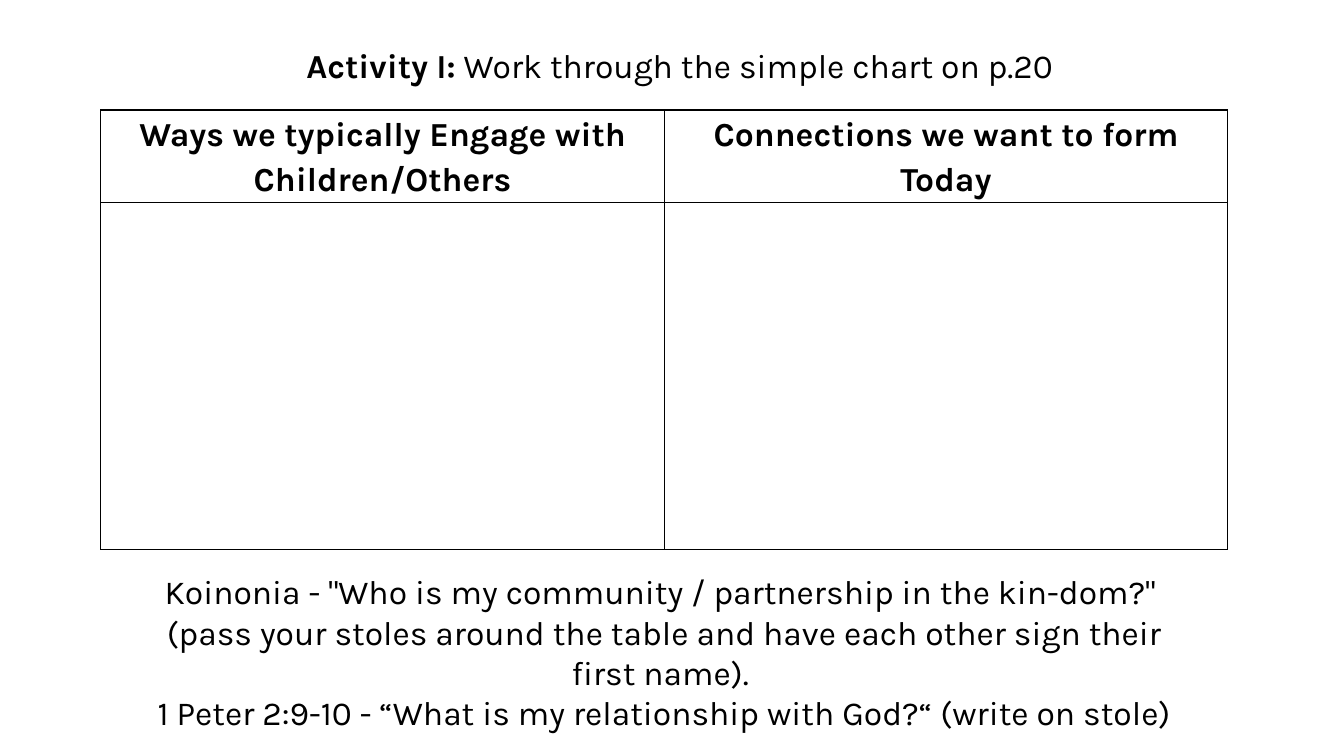
from pptx import Presentation
from pptx.dml.color import RGBColor
from pptx.enum import text as t
from pptx.oxml import parse_xml
from pptx.oxml.ns import nsdecls
from pptx.util import Cm, Pt

FONT, INK, SIZE = "Karla", "000000", 24
HEADINGS = [
    "Ways we typically Engage with Children/Others",
    "Connections we want to form Today",
]
REFLECTIONS = [
    'Koinonia - "Who is my community / partnership in the kin-dom?" ',
    "(pass your stoles around the table and have each other sign their first name). ",
    "1 Peter 2:9-10 - “What is my relationship with God?“ (write on stole)",
]


def color(hex_string):
    return RGBColor.from_string(hex_string)


def add_run(paragraph, wording, bold=False):
    run = paragraph.add_run()
    run.text = wording
    run.font.name = FONT
    run.font.size = Pt(SIZE)
    run.font.bold = bold
    run.font.color.rgb = color(INK)
    paragraph.alignment = t.PP_ALIGN.CENTER


def outline_cell(cell):
    """Draw a thin line on all four sides; borders precede the fill in the XML."""
    properties = cell._tc.get_or_add_tcPr()
    for position, side in enumerate(("lnL", "lnR", "lnT", "lnB")):
        properties.insert(position, parse_xml(
            f'<a:{side} {nsdecls("a")} w="{Pt(1)}"><a:solidFill>'
            f'<a:srgbClr val="{INK}"/></a:solidFill></a:{side}>'))


def place_activity(slide, left, top, width, height):
    activity = slide.shapes.title
    activity.left, activity.top, activity.width, activity.height = left, top, width, height
    frame = activity.text_frame
    frame.word_wrap = True
    frame.auto_size = t.MSO_AUTO_SIZE.NONE
    frame.vertical_anchor = t.MSO_ANCHOR.TOP
    line = frame.paragraphs[0]
    line.line_spacing = 1.15
    line.space_after = Pt(8)
    add_run(line, "Activity I:", bold=True)
    add_run(line, " Work through the simple chart on p.20")


def add_worksheet(slide, left, top, width, height):
    """Table with a heading row above a blank row to write in."""
    worksheet = slide.shapes.add_table(2, len(HEADINGS), left, top, width, height).table
    heading_height = Cm(2.34)
    worksheet.rows[0].height = heading_height
    worksheet.rows[1].height = height - heading_height
    for cell in worksheet.iter_cells():
        cell.fill.background()
        cell.margin_left = cell.margin_right = Cm(0.18)
        cell.margin_top = cell.margin_bottom = 0
        outline_cell(cell)
    for column, heading in enumerate(HEADINGS):
        line = worksheet.cell(0, column).text_frame.paragraphs[0]
        line.line_spacing = 1.15
        add_run(line, heading, bold=True)


def add_reflections(slide, left, top, width, height):
    frame = slide.shapes.add_textbox(left, top, width, height).text_frame
    frame.word_wrap = True
    for index, reflection in enumerate(REFLECTIONS):
        line = frame.add_paragraph() if index else frame.paragraphs[0]
        add_run(line, reflection)


def main():
    deck = Presentation()
    deck.slide_width, deck.slide_height = Cm(33.87), Cm(19.05)
    slide = deck.slides.add_slide(deck.slide_layouts[5])
    place_activity(slide, Cm(2.03), Cm(0.86), Cm(30.2), Cm(1.37))
    add_worksheet(slide, Cm(2.54), Cm(2.77), Cm(28.4), Cm(11.08))
    add_reflections(slide, Cm(3.28), Cm(14.27), Cm(26.92), Cm(4.37))
    deck.save("out.pptx")


if __name__ == "__main__":
    main()
